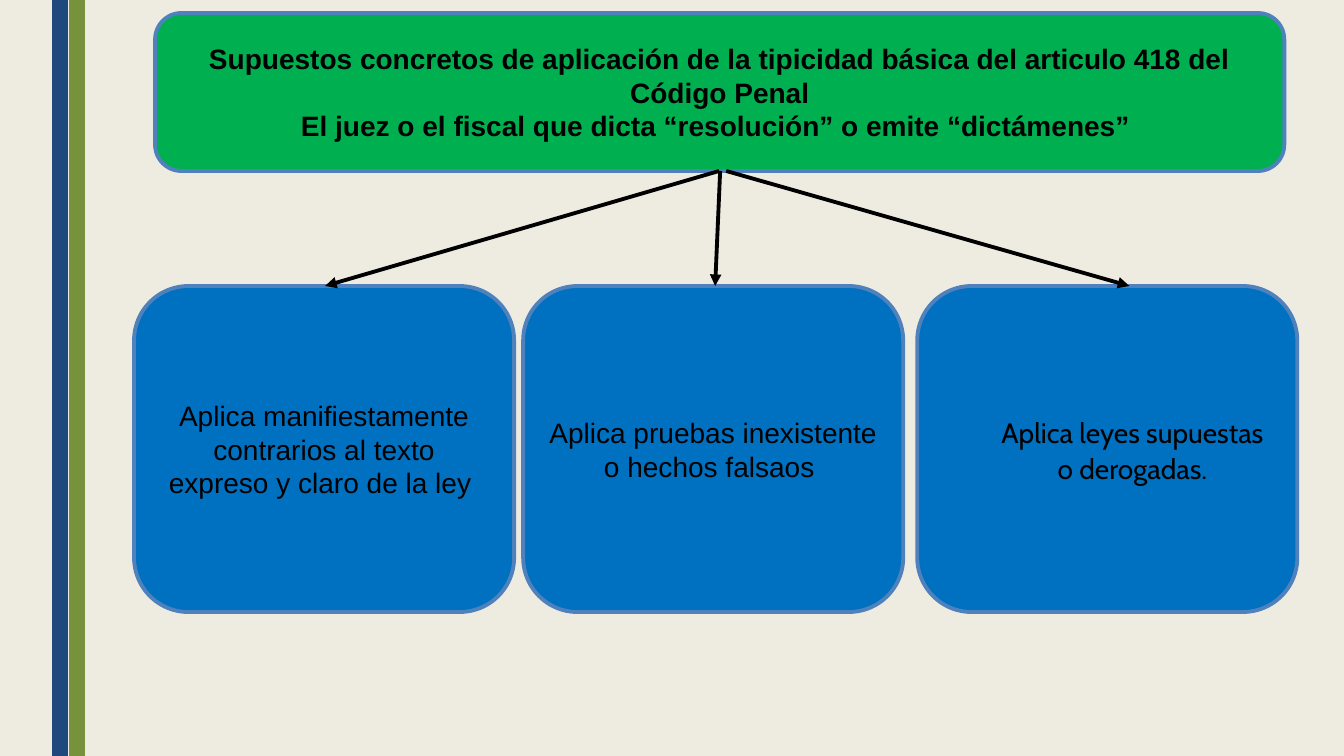
from dataclasses import dataclass

from lxml import etree
from pptx import Presentation
from pptx import util as u
from pptx.dml.color import RGBColor
from pptx.enum import shapes, text
from pptx.oxml import ns

PX = 914400 / 100.8


@dataclass(frozen=True)
class Theme:
    """Colours, fonts and sizes of the slide."""
    background: str = "EEECE1"
    navy: str = "1F497D"
    olive: str = "76923C"
    green: str = "00B050"
    blue: str = "0070C0"
    outline: str = "4F81BD"
    ink: str = "000000"
    font: str = "Arial"
    alternate_font: str = "Cabin"
    size: int = 20
    line: float = 2.75


class Diagram:
    """Draws the elements of one slide in one style."""

    def __init__(self, slide, theme):
        self.slide = slide
        self.theme = theme
        slide.background.fill.solid()
        slide.background.fill.fore_color.rgb = RGBColor.from_string(theme.background)

    def emu(self, *lengths):
        return [u.Emu(round(length * PX)) for length in lengths]

    def box(self, area, fill, rounded=True):
        preset = shapes.MSO_SHAPE.ROUNDED_RECTANGLE if rounded else shapes.MSO_SHAPE.RECTANGLE
        box = self.slide.shapes.add_shape(preset, *self.emu(*area))
        box.shadow.inherit = False
        box.fill.solid()
        box.fill.fore_color.rgb = RGBColor.from_string(fill)
        if rounded:
            box.line.color.rgb = RGBColor.from_string(self.theme.outline)
            box.line.width = u.Pt(self.theme.line)
        else:
            box.line.fill.background()
        return box

    def label(self, holder, lines, font=None, bold=False):
        frame = holder.text_frame
        frame.word_wrap = True
        frame.auto_size = text.MSO_AUTO_SIZE.NONE
        frame.vertical_anchor = text.MSO_ANCHOR.MIDDLE
        for index, line in enumerate(lines):
            paragraph = frame.add_paragraph() if index else frame.paragraphs[0]
            paragraph.alignment = text.PP_ALIGN.CENTER
            run = paragraph.add_run()
            run.text = line
            run.font.name = font or self.theme.font
            run.font.size = u.Pt(self.theme.size)
            run.font.bold = bold
            run.font.color.rgb = RGBColor.from_string(self.theme.ink)

    def title(self, area, lines):
        banner = self.box(area, self.theme.green)
        heading = self.slide.shapes.title
        heading.left, heading.top, heading.width, heading.height = self.emu(*area)
        banner._element.addnext(heading._element)
        self.label(heading, lines, bold=True)

    def card(self, area, wording, font=None):
        card = self.box(area, self.theme.blue)
        self.label(card, [wording], font)
        return card

    def arrow(self, start, end):
        arrow = self.slide.shapes.add_connector(
            shapes.MSO_CONNECTOR.STRAIGHT, *self.emu(*start, *end))
        arrow.line.color.rgb = RGBColor.from_string(self.theme.ink)
        arrow.line.width = u.Pt(self.theme.line)
        etree.SubElement(arrow.line._get_or_add_ln(), ns.qn("a:tailEnd"), type="triangle")
        etree.SubElement(arrow._element.spPr, ns.qn("a:effectLst"))


def main():
    deck = Presentation()
    deck.slide_width, deck.slide_height = u.Inches(13.33), u.Inches(7.5)
    theme = Theme()
    diagram = Diagram(deck.slides.add_slide(deck.slide_layouts[5]), theme)

    for left, colour in ((69, theme.olive), (52, theme.navy)):
        diagram.box((left, 0, 16, 756), colour, rounded=False)

    diagram.title((155, 13, 1129, 158), [
        "Supuestos concretos de aplicación de la tipicidad básica del articulo 418 del Código Penal",
        "El juez o el fiscal que dicta “resolución” o emite “dictámenes” ",
    ])

    cards_top = 286
    cases = (
        (134, "Aplica manifiestamente contrarios al texto expreso y claro de la ley ", theme.font),
        (523, "Aplica pruebas inexistente o hechos falsaos ", theme.font),
        (917, "Aplica leyes supuestas o derogadas.", theme.alternate_font),
    )
    for left, wording, font in cases:
        last_card = diagram.card((left, cards_top, 380, 326), wording, font)

    repealed_laws = last_card.text_frame.paragraphs[0]
    repealed_laws.line_spacing = 1.07
    repealed_laws.space_after = u.Pt(8)
    repealed_laws._p.get_or_add_pPr().set("marL", str(u.Inches(0.5)))

    for start, end in ((719, 325), (726, 1129), (720, 715)):
        diagram.arrow((start, 171), (end, cards_top))

    deck.save("out.pptx")


if __name__ == "__main__":
    main()
